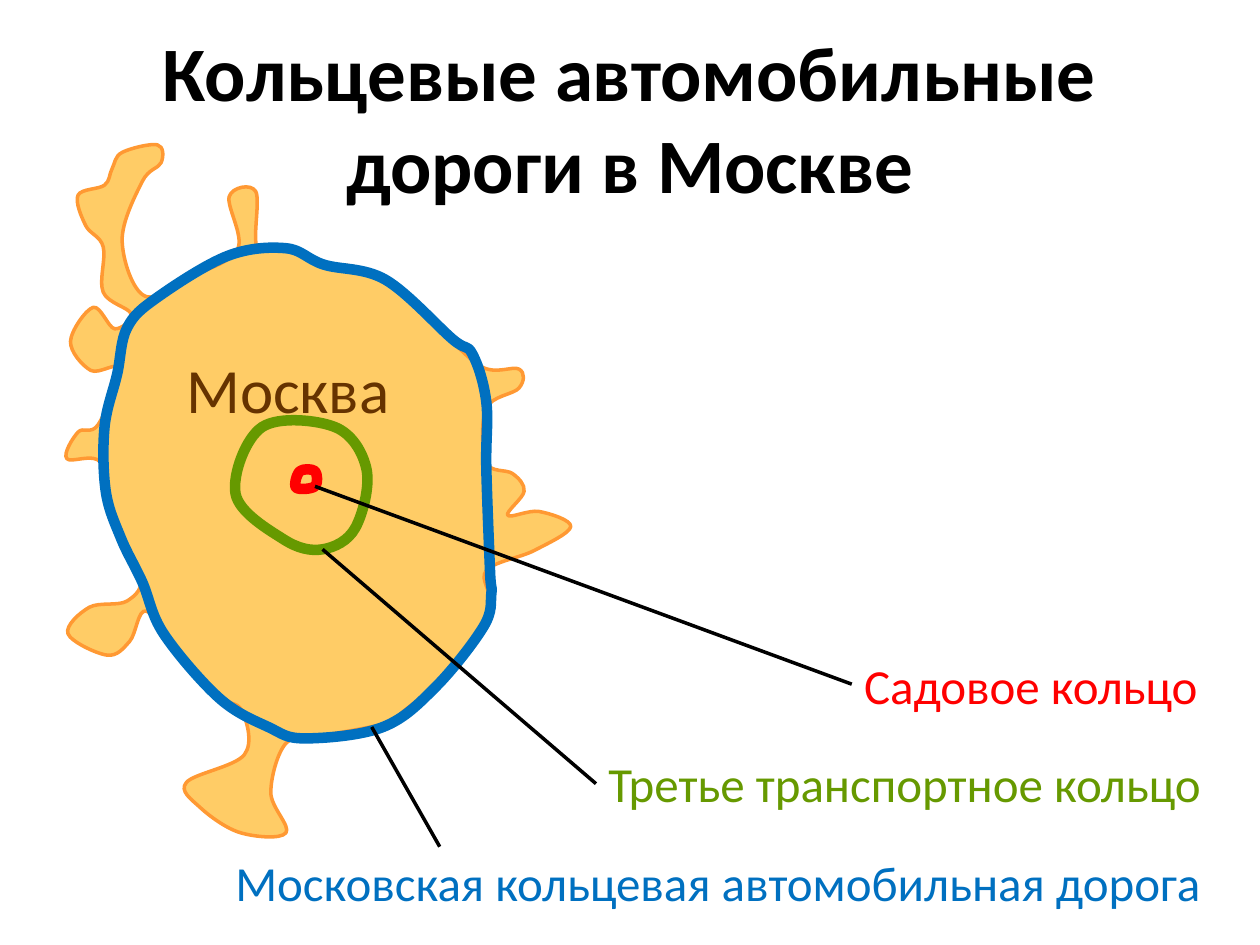
from pptx import Presentation
from pptx.dml.color import RGBColor
from pptx.enum.shapes import MSO_CONNECTOR
from pptx.enum.text import MSO_ANCHOR, MSO_AUTO_SIZE, PP_ALIGN
from pptx.oxml import parse_xml
from pptx.oxml.ns import nsdecls, qn
from pptx.util import Inches, Pt

COLORS = {
    "title": "000000", "leader": "000000", "land": "FFCC66", "border": "FF9933",
    "city": "663300", "outer": "0070C0", "third": "669900", "garden": "FF0000",
}

deck = Presentation()
deck.slide_width, deck.slide_height = Inches(10), Inches(7.5)
cell = deck.slide_width // 1000
page = deck.slides.add_slide(deck.slide_layouts[5])


def draw_curve(shapes, knots, line_color, line_width, fill_color=None):
    points = [(x * cell, y * cell) for x, y in knots]
    builder = shapes.build_freeform(*points[0])
    builder.add_line_segments(points[1:] + points[:1], close=True)
    outline = builder.convert_to_shape()
    outline.shadow.inherit = False
    outline.line.color.rgb = RGBColor.from_string(COLORS[line_color])
    outline.line.width = Pt(line_width)
    if fill_color:
        outline.fill.solid()
        outline.fill.fore_color.rgb = RGBColor.from_string(COLORS[fill_color])
    else:
        outline.fill.background()
    left, top = min(x for x, y in points), min(y for x, y in points)
    count = len(points)
    for index, segment in enumerate(list(outline._element.iter(qn("a:lnTo")))):
        before, start, end, after = [points[(index + step) % count] for step in (-1, 0, 1, 2)]
        leaving = [s + (e - b) / 6 for s, e, b in zip(start, end, before)]
        arriving = [e - (a - s) / 6 for e, a, s in zip(end, after, start)]
        segment.tag = qn("a:cubicBezTo")
        for position, (x, y) in enumerate((leaving, arriving)):
            point = f'<a:pt {nsdecls("a")} x="{round(x - left)}" y="{round(y - top)}"/>'
            segment.insert(position, parse_xml(point))


def write_text(box, text, size, color, bold=False, wrap=False):
    frame = box.text_frame
    layout = {"word_wrap": wrap, "auto_size": MSO_AUTO_SIZE.NONE if wrap else MSO_AUTO_SIZE.SHAPE_TO_FIT_TEXT}
    for name, value in layout.items():
        setattr(frame, name, value)
    para = frame.paragraphs[0]
    span = para.add_run()
    span.text = text
    for name, value in {"name": "Calibri", "size": Pt(size), "bold": bold}.items():
        setattr(span.font, name, value)
    span.font.color.rgb = RGBColor.from_string(COLORS[color])
    return para


title = page.shapes.title
place = {"left": 50 * cell, "top": 30 * cell, "width": 900 * cell, "height": 125 * cell}
for name, value in place.items():
    setattr(title, name, value)
write_text(title, "Кольцевые автомобильные дороги в Москве", 44, "title", True, True).alignment = PP_ALIGN.CENTER
title.text_frame.vertical_anchor = MSO_ANCHOR.MIDDLE

city_border = [
    (321, 564), (365, 526), (388, 481), (386, 453), (424, 437), (453, 418), (428, 406),
    (403, 409), (416, 390), (407, 376), (386, 367), (386, 324), (412, 308), (412, 293),
    (382, 291), (341, 253), (307, 223), (283, 212), (250, 208), (224, 196), (204, 196),
    (203, 152), (182, 156), (189, 197), (156, 218), (115, 235), (97, 191), (113, 144),
    (128, 129), (125, 115), (97, 121), (89, 134), (83, 147), (62, 155), (68, 179),
    (82, 196), (82, 232), (104, 249), (91, 261), (74, 244), (56, 271), (72, 294),
    (95, 293), (78, 337), (62, 343), (53, 364), (80, 367), (88, 411), (112, 456),
    (101, 477), (71, 482), (54, 503), (85, 520), (103, 509), (116, 485), (142, 518),
    (171, 552), (192, 564), (194, 599), (148, 621), (159, 641), (191, 661), (227, 661),
    (215, 629), (227, 590), (256, 584), (307, 574),
]
draw_curve(page.shapes, city_border, "border", 2, "land")

rings = [
    {
        "color": "outer",
        "knots": [
            (242, 586), (304, 577), (346, 545), (384, 497), (390, 471), (389, 454),
            (386, 371), (386, 319), (375, 281), (359, 269), (306, 222), (257, 210),
            (227, 197), (181, 203), (125, 236), (101, 260), (93, 297), (83, 339),
            (84, 390), (96, 427), (113, 462), (130, 503), (174, 554), (213, 577),
        ],
        "label": "Московская кольцевая автомобильная дорога",
        "area": (177, 672, 794, 57),
        "leader": (295, 577, 349, 672),
    },
    {
        "color": "third",
        "knots": [(282, 419), (291, 373), (266, 339), (208, 339), (187, 392), (225, 428), (256, 436)],
        "label": "Третье транспортное кольцо",
        "area": (473, 593, 508, 57),
        "leader": (473, 622, 256, 436),
    },
    {
        "color": "garden",
        "knots": [(250, 386), (250, 374), (238, 374), (235, 387)],
        "label": "Садовое кольцо",
        "area": (676, 515, 287, 57),
        "leader": (676, 543, 250, 386),
    },
]

for ring in rings:
    group = page.shapes.add_group_shape()
    draw_curve(group.shapes, ring["knots"], ring["color"], 6)
    label = group.shapes.add_textbox(*[value * cell for value in ring["area"]])
    write_text(label, ring["label"], 28, ring["color"])
    leader = group.shapes.add_connector(MSO_CONNECTOR.STRAIGHT, *[value * cell for value in ring["leader"]])
    leader.line.color.rgb = RGBColor.from_string(COLORS["leader"])
    leader.line.width = Pt(2)
    leader._element.spPr.append(parse_xml(f'<a:effectLst {nsdecls("a")}/>'))
    if ring["color"] == "outer":
        city = page.shapes.add_textbox(*[value * cell for value in (138, 273, 183, 71)])
        write_text(city, "Москва", 36, "city")

deck.save("out.pptx")
